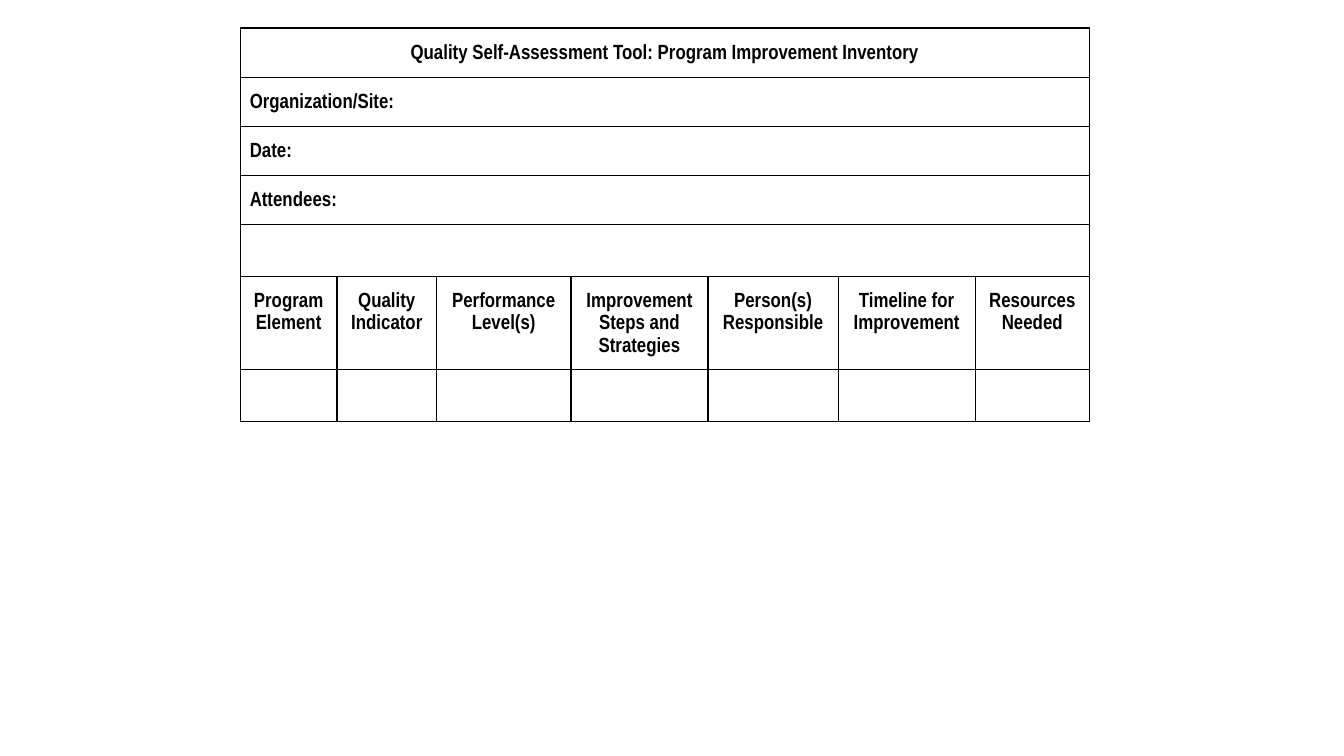
import dataclasses

import lxml.etree
import pptx
import pptx.dml.color
import pptx.enum.text
import pptx.oxml.ns
import pptx.util

Cm, Pt = pptx.util.Cm, pptx.util.Pt
ALIGN = pptx.enum.text.PP_ALIGN
qn = pptx.oxml.ns.qn


@dataclasses.dataclass(frozen=True)
class Theme:
    font: str = "Arial Narrow"
    size: int = 11
    ink: str = "000000"
    border: float = 0.75
    line_spacing: float = 1.15
    space_before: int = 12


THEME = Theme()

TITLE = "Quality Self-Assessment Tool: Program Improvement Inventory"
FIELDS = ["Organization/Site:", "Date:", "Attendees:", ""]
# Column heading and width in cm
COLUMNS = [
    ("Program Element", 1.83),
    ("Quality Indicator", 1.88),
    ("Performance Level(s)", 2.54),
    ("Improvement Steps and Strategies", 2.59),
    ("Person(s) Responsible", 2.46),
    ("Timeline for Improvement", 2.59),
    ("Resources Needed", 2.16),
]
LEFT, TOP = 4.54, 0.53
BAND_HEIGHT, HEADING_HEIGHT, ENTRY_HEIGHT = 0.93, 1.75, 0.87


def set_borders(cell):
    """Draw a solid line on all four sides of a cell."""
    tc_pr = cell._tc.get_or_add_tcPr()
    for i, side in enumerate(("a:lnL", "a:lnR", "a:lnT", "a:lnB")):
        ln = lxml.etree.Element(qn(side), w=str(Pt(THEME.border)))
        fill = lxml.etree.SubElement(ln, qn("a:solidFill"))
        lxml.etree.SubElement(fill, qn("a:srgbClr"), val=THEME.ink)
        tc_pr.insert(i, ln)


def style_cell(cell):
    cell.margin_left = cell.margin_right = Cm(0.18)
    cell.margin_top = cell.margin_bottom = Cm(0.25)
    cell.fill.background()
    set_borders(cell)


def write_cell(cell, text, align=ALIGN.LEFT):
    p = cell.text_frame.paragraphs[0]
    p.text = text
    p.alignment = align
    p.line_spacing = THEME.line_spacing
    p.space_before = Pt(THEME.space_before)
    for r in p.runs:
        r.font.name = THEME.font
        r.font.size = Pt(THEME.size)
        r.font.bold = True
        r.font.color.rgb = pptx.dml.color.RGBColor.from_string(THEME.ink)
    if not text:
        # An empty cell keeps the small type size, so its row stays low
        end = lxml.etree.SubElement(p._p, qn("a:endParaRPr"))
        end.set("sz", str(THEME.size * 100))


def add_inventory_table(s):
    bands = [TITLE] + FIELDS
    heights = [BAND_HEIGHT] * len(bands) + [HEADING_HEIGHT, ENTRY_HEIGHT]
    widths = [width for _, width in COLUMNS]
    table = s.shapes.add_table(
        len(heights), len(widths), Cm(LEFT), Cm(TOP),
        Cm(sum(widths)), Cm(sum(heights))).table
    table.first_row = table.horz_banding = False
    for column, width in zip(table.columns, widths):
        column.width = Cm(width)
    for row, height in zip(table.rows, heights):
        row.height = Cm(height)
    for cell in table.iter_cells():
        style_cell(cell)

    # Full-width rows: title, fields and a spacer
    for i, text in enumerate(bands):
        cell = table.cell(i, 0)
        cell.merge(table.cell(i, len(widths) - 1))
        write_cell(cell, text, ALIGN.LEFT if i else ALIGN.CENTER)

    # Column headings above one blank entry row
    for j, (heading, _) in enumerate(COLUMNS):
        write_cell(table.cell(len(bands), j), heading, ALIGN.CENTER)
        write_cell(table.cell(len(bands) + 1, j), "")


def main():
    prs = pptx.Presentation()
    prs.slide_width, prs.slide_height = Cm(25.4), Cm(14.29)
    s = prs.slides.add_slide(prs.slide_layouts[6])
    add_inventory_table(s)
    prs.save("out.pptx")


if __name__ == "__main__":
    main()
